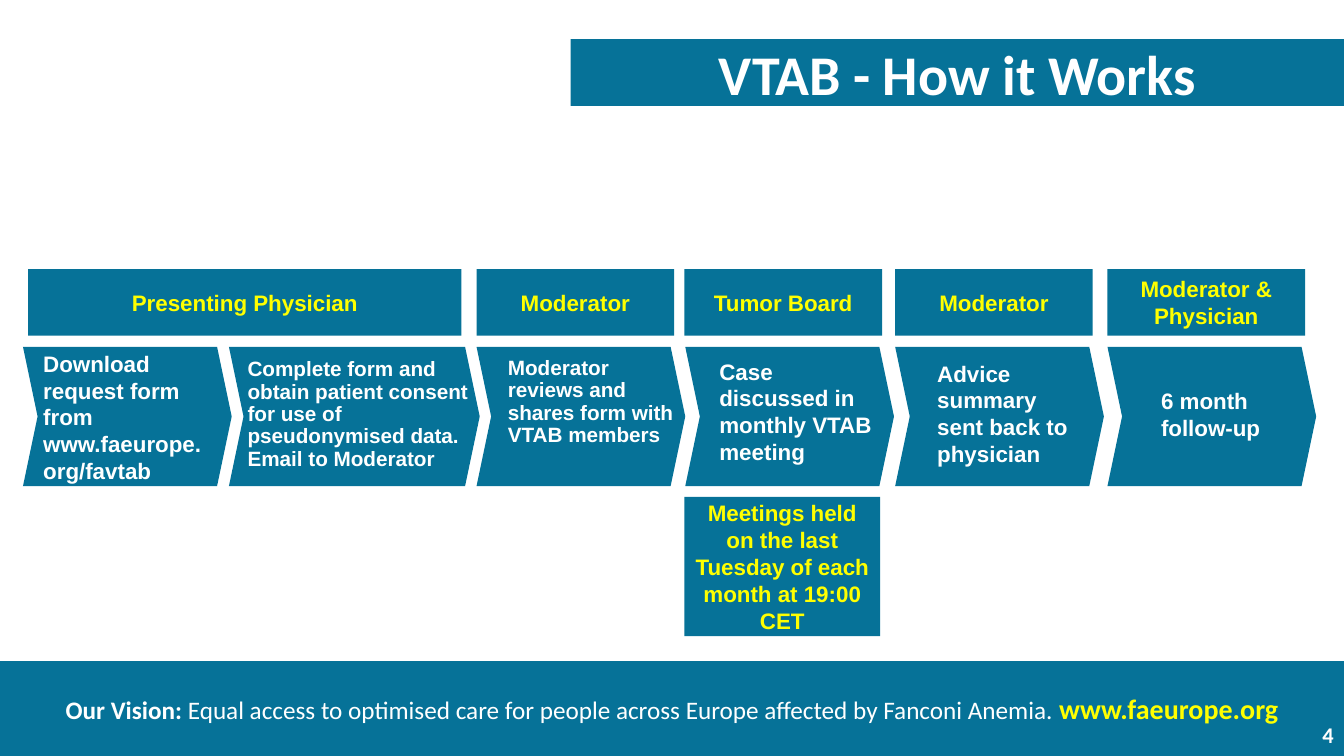
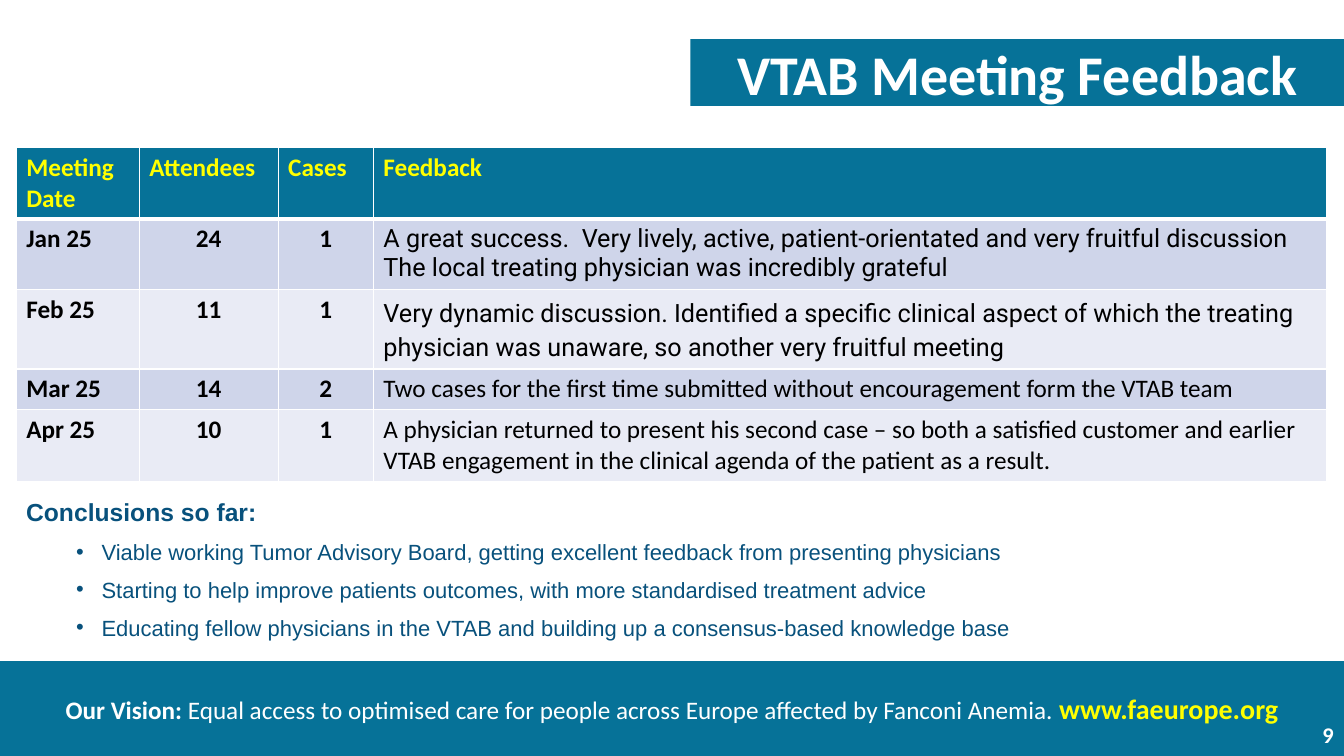
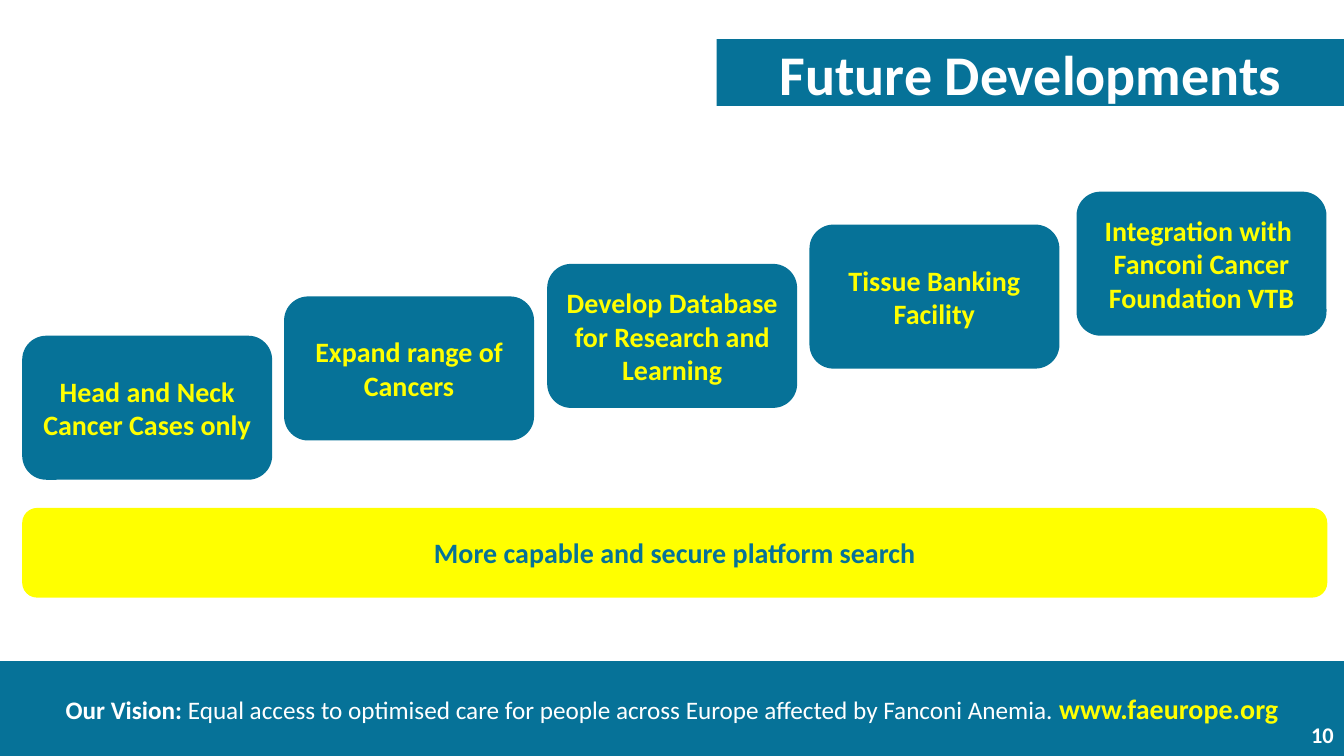
from dataclasses import dataclass

from lxml.etree import SubElement
from pptx import Presentation
from pptx.dml.color import RGBColor
from pptx.enum.shapes import MSO_SHAPE as Shape
from pptx.enum.text import MSO_ANCHOR as Anchor, PP_ALIGN as Align
from pptx.oxml.ns import qn
from pptx.util import Cm, Pt


@dataclass(frozen=True)
class Theme:
    teal: RGBColor = RGBColor(0x06, 0x72, 0x98)
    navy: RGBColor = RGBColor(0x08, 0x51, 0x7C)
    yellow: RGBColor = RGBColor(0xFF, 0xFF, 0x00)
    white: RGBColor = RGBColor(0xFF, 0xFF, 0xFF)
    black: RGBColor = RGBColor(0x00, 0x00, 0x00)
    bands: tuple = (RGBColor(0xCF, 0xD5, 0xEA), RGBColor(0xE9, 0xEB, 0xF5))
    main_font: str = "Calibri"
    flow_font: str = "Arial"
    quote_font: str = "Roboto"
    title_size: float = 40
    card_size: float = 20
    table_size: float = 18
    vision_size: float = 18
    address_size: float = 20
    flow_size: float = 16
    tight_size: float = 14.8
    number_size: float = 16
    heading_size: float = 17.6
    bullet_size: float = 15.7


@dataclass(frozen=True)
class Step:
    text: str
    left: float
    width: float
    text_left: float
    text_top: float
    text_width: float
    tight: bool = False


THEME = Theme()
SLIDE_WIDTH, SLIDE_HEIGHT = 33.87, 19.05
STEP_TOP, STEP_HEIGHT = 8.74, 3.51

OWNERS = [
    ("Presenting Physician", 0.71, 10.92),
    ("Moderator", 12.01, 4.98),
    ("Tumor Board", 17.25, 4.98),
    ("Moderator", 22.56, 4.98),
    ("Moderator & Physician", 27.91, 4.98),
]
STEPS = [
    Step("Download request form from www.faeurope.org/favtab", 0.58, 5.26, 0.84, 8.69, 4.78),
    Step("Complete form and obtain patient consent for use of pseudonymised data. "
         "Email to Moderator", 5.77, 6.32, 5.99, 8.92, 6.38, True),
    Step("Moderator reviews and shares form with VTAB members",
         12.01, 5.26, 12.55, 8.89, 4.7, True),
    Step("Case discussed in monthly VTAB meeting", 17.27, 5.26, 17.88, 8.89, 4.57),
    Step("Advice summary sent back to physician", 22.56, 5.26, 23.37, 8.94, 3.94),
    Step("6 month follow-up", 27.91, 5.26, 29.01, 9.63, 3.68),
]

COLUMN_WIDTHS = [3.1, 3.5, 2.4, 24.03]
ROW_HEIGHTS = [1.8, 1.75, 1.95, 1.03, 1.8]
MEETINGS = [
    ["Meeting Date", "Attendees", "Cases", "Feedback"],
    ["Jan 25", "24", "1",
     "A great success.  Very lively, active, patient-orientated and very fruitful discussion\n"
     "The local treating physician was incredibly grateful"],
    ["Feb 25", "11", "1",
     "Very dynamic discussion. Identified a specific clinical aspect of which the treating "
     "physician was unaware, so another very fruitful meeting"],
    ["Mar 25", "14", "2",
     "Two cases for the first time submitted without encouragement form the VTAB team"],
    ["Apr 25", "10", "1",
     "A physician returned to present his second case – so both a satisfied customer and "
     "earlier VTAB engagement in the clinical agenda of the patient as a result."],
]
QUOTED_ROWS = {1, 2}
LOOSE_ROW = 2

CONCLUSIONS = [
    "Viable working Tumor Advisory Board, getting excellent feedback from presenting physicians",
    "Starting to help improve patients outcomes, with more standardised treatment advice",
    "Educating fellow physicians in the VTAB and building up a consensus-based knowledge base",
]

STAGES = [
    ("Head and Neck Cancer Cases only", 0.56, 8.46),
    ("Expand range of Cancers", 7.16, 7.47),
    ("Develop Database for Research and Learning", 13.79, 6.65),
    ("Tissue Banking Facility", 20.4, 5.66),
    ("Integration with \nFanconi Cancer Foundation VTB", 27.13, 4.83),
]


def style(font, name, size, colour, bold=True):
    font.name = name
    font.size = Pt(size)
    font.color.rgb = colour
    font.bold = bold


def write(frame, text, name, size, colour, bold=True, align=Align.LEFT, leading=None):
    frame.text = text
    for para in frame.paragraphs:
        para.alignment = align
        para.line_spacing = leading
        style(para.font, name, size, colour, bold)


def add_block(page, kind, left, top, width, height, fill=THEME.teal):
    block = page.shapes.add_shape(kind, Cm(left), Cm(top), Cm(width), Cm(height))
    block.shadow.inherit = False
    block.fill.solid()
    block.fill.fore_color.rgb = fill
    block.line.fill.background()
    block.text_frame.word_wrap = True
    block.text_frame.vertical_anchor = Anchor.MIDDLE
    return block


def add_label(page, kind, area, text, name, size, colour=THEME.yellow, fill=THEME.teal):
    block = add_block(page, kind, *area, fill)
    write(block.text_frame, text, name, size, colour, align=Align.CENTER)


def add_text(page, left, top, width, height):
    box = page.shapes.add_textbox(Cm(left), Cm(top), Cm(width), Cm(height))
    box.text_frame.word_wrap = True
    return box.text_frame


def add_footer(page, number):
    band = add_block(page, Shape.RECTANGLE, 0, 16.66, SLIDE_WIDTH, SLIDE_HEIGHT - 16.66)
    para = band.text_frame.paragraphs[0]
    para.alignment = Align.CENTER
    for text, size, colour, bold in [
        ("Our Vision: ", THEME.vision_size, THEME.white, True),
        ("Equal access to optimised care for people across Europe affected by Fanconi Anemia. ",
         THEME.vision_size, THEME.white, False),
        ("www.faeurope.org", THEME.address_size, THEME.yellow, True),
    ]:
        span = para.add_run()
        span.text = text
        style(span.font, THEME.main_font, size, colour, bold)
    frame = add_text(page, 26.24, 18.01, 7.62, 1.02)
    frame.vertical_anchor = Anchor.MIDDLE
    write(frame, str(number), THEME.main_font, THEME.number_size, THEME.white,
          align=Align.RIGHT)


def add_page(deck, title, title_left, number):
    page = deck.slides.add_slide(deck.slide_layouts[6])
    add_footer(page, number)
    add_label(page, Shape.RECTANGLE, (title_left, 0.99, SLIDE_WIDTH - title_left, 1.68),
              title, THEME.main_font, THEME.title_size, THEME.white)
    return page


def add_step(page, step):
    chevron = add_block(page, Shape.CHEVRON, step.left, STEP_TOP, step.width, STEP_HEIGHT)
    chevron.adjustments[0] = 0.105
    frame = add_text(page, step.text_left, step.text_top, step.text_width, 3.18)
    write(frame, step.text, THEME.flow_font,
          THEME.tight_size if step.tight else THEME.flow_size, THEME.white,
          leading=0.9 if step.tight else None)


def add_borders(cell, bottom):
    properties = cell._tc.get_or_add_tcPr()
    for side, points in (("L", 1), ("R", 1), ("T", 1), ("B", bottom)):
        line = SubElement(properties, qn(f"a:ln{side}"), w=str(Pt(points)))
        fill = SubElement(line, qn("a:solidFill"))
        SubElement(fill, qn("a:srgbClr"), val=str(THEME.white))


def fill_cell(cell, row, column, text):
    header = row == 0
    feedback = column == len(COLUMN_WIDTHS) - 1
    add_borders(cell, 3 if header else 1)
    cell.fill.solid()
    cell.fill.fore_color.rgb = THEME.teal if header else THEME.bands[(row - 1) % 2]
    write(cell.text_frame, text,
          THEME.quote_font if feedback and row in QUOTED_ROWS else THEME.main_font,
          THEME.table_size,
          THEME.yellow if header else THEME.black,
          bold=header or not feedback,
          align=Align.CENTER if not header and column in (1, 2) else Align.LEFT,
          leading=1.15 if feedback and row == LOOSE_ROW else None)


def add_meeting_table(page):
    table = page.shapes.add_table(
        len(MEETINGS), len(COLUMN_WIDTHS), Cm(0.41), Cm(3.71),
        Cm(sum(COLUMN_WIDTHS)), Cm(sum(ROW_HEIGHTS))).table
    for column, width in zip(table.columns, COLUMN_WIDTHS):
        column.width = Cm(width)
    for row, height in zip(table.rows, ROW_HEIGHTS):
        row.height = Cm(height)
    for row, texts in enumerate(MEETINGS):
        for column, text in enumerate(texts):
            fill_cell(table.cell(row, column), row, column, text)


def add_bullet(para):
    para.level = 1
    properties = para._p.get_or_add_pPr()
    properties.set("marL", str(Cm(1.9)))
    properties.set("indent", str(-Cm(0.64)))
    SubElement(properties, qn("a:buFont"), typeface=THEME.flow_font)
    SubElement(properties, qn("a:buChar"), char="•")


def add_conclusions(page):
    frame = add_text(page, 0.41, 12.55, 32.23, 4.06)
    heading = frame.paragraphs[0]
    heading.text = "Conclusions so far:"
    style(heading.font, THEME.flow_font, THEME.heading_size, THEME.navy)
    for text in CONCLUSIONS:
        para = frame.add_paragraph()
        para.text = text
        add_bullet(para)
        para.space_before = Pt(6)
        style(para.font, THEME.flow_font, THEME.bullet_size, THEME.navy, False)
    for para in frame.paragraphs:
        para.line_spacing = 0.8
        para.space_after = Pt(6)


def build_process(deck):
    page = add_page(deck, "VTAB - How it Works", 14.38, 4)
    for step in STEPS:
        add_step(page, step)
    for text, left, width in OWNERS:
        add_label(page, Shape.RECTANGLE, (left, 6.78, width, 1.68), text,
                  THEME.flow_font, THEME.flow_size)
    add_label(page, Shape.RECTANGLE, (17.25, 12.52, 4.93, STEP_HEIGHT),
              "Meetings held on the last Tuesday of each month at 19:00 CET",
              THEME.flow_font, THEME.flow_size)


def build_feedback(deck):
    page = add_page(deck, "VTAB Meeting Feedback", 17.4, 9)
    add_meeting_table(page)
    add_conclusions(page)


def build_future(deck):
    page = add_page(deck, "Future Developments", 18.06, 10)
    for text, left, top in STAGES:
        add_label(page, Shape.ROUNDED_RECTANGLE, (left, top, 6.3, 3.63), text,
                  THEME.main_font, THEME.card_size)
    add_label(page, Shape.ROUNDED_RECTANGLE, (0.56, 12.8, 32.89, 2.26),
              "More capable and secure platform search",
              THEME.main_font, THEME.card_size, THEME.teal, THEME.yellow)


def main():
    deck = Presentation()
    deck.slide_width, deck.slide_height = Cm(SLIDE_WIDTH), Cm(SLIDE_HEIGHT)
    build_process(deck)
    build_feedback(deck)
    build_future(deck)
    deck.save("out.pptx")


if __name__ == "__main__":
    main()
